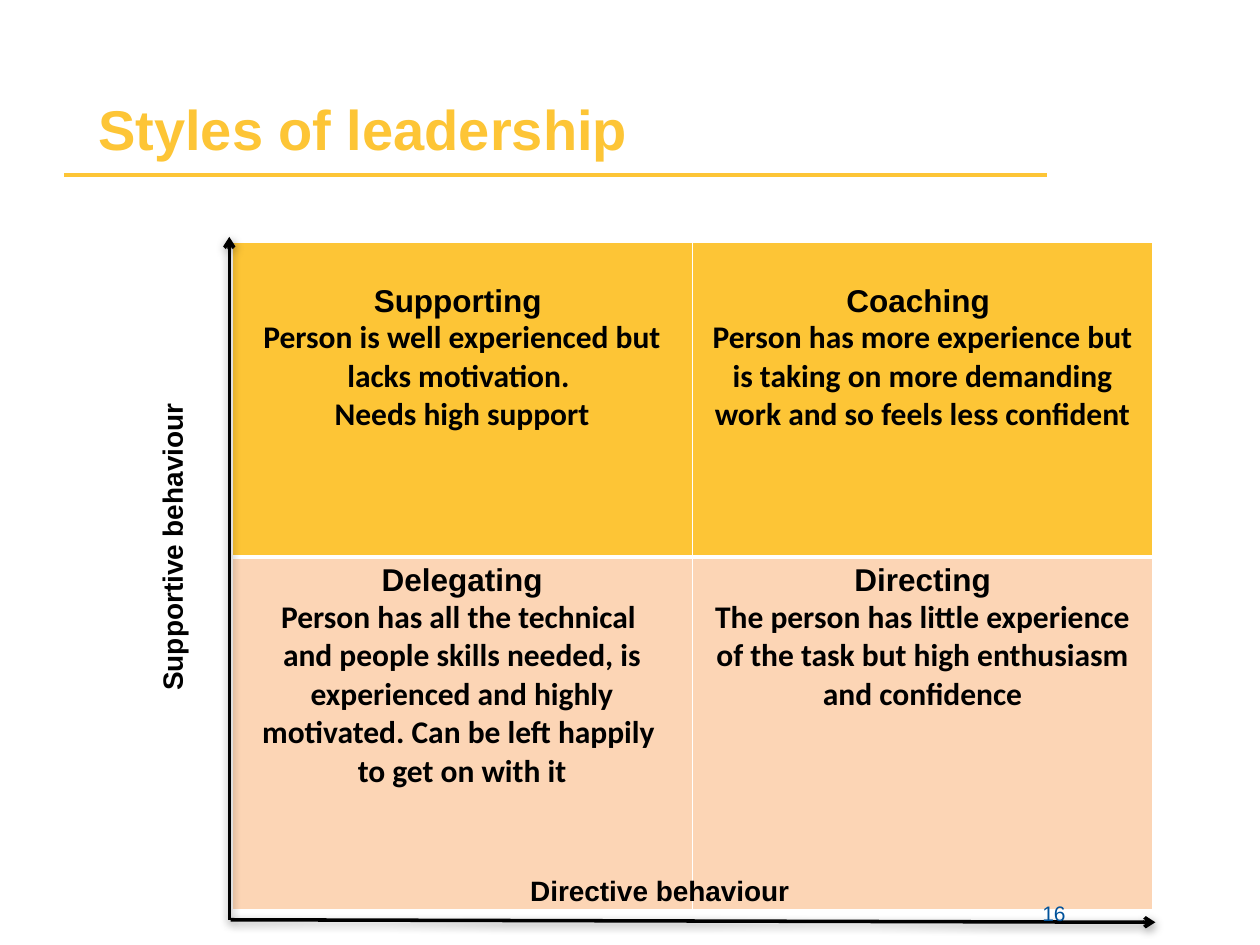
"""Build a slide with the four styles of leadership on two axes."""
import dataclasses
import typing

import lxml.etree
import pptx
import pptx.dml.color
import pptx.enum.shapes
import pptx.enum.text
import pptx.oxml
import pptx.oxml.ns
import pptx.util

ALIGN = pptx.enum.text.PP_ALIGN
SPACE = 'xmlns:a="http://schemas.openxmlformats.org/drawingml/2006/main"'


@dataclasses.dataclass(frozen=True)
class Theme:
    gold: str = "FDC536"
    peach: str = "FCD5B5"
    black: str = "000000"
    white: str = "FFFFFF"
    blue: str = "00529B"
    head: str = "Arial"
    body: str = "Calibri"
    title: int = 32
    cell: int = 18
    axis: int = 16
    page: int = 12
    thin: int = 1
    line: int = 2
    thick: int = 3


@dataclasses.dataclass(frozen=True)
class Box:
    """Left, top, width and height as percent of the slide."""
    left: float
    top: float
    width: float
    height: float


@dataclasses.dataclass(frozen=True)
class Style:
    name: str
    lines: tuple[str, ...]


@dataclasses.dataclass(frozen=True)
class Label:
    text: str
    box: Box
    size: int
    color: str
    bold: bool = True
    align: typing.Any = ALIGN.LEFT
    turn: bool = False


@dataclasses.dataclass(frozen=True)
class Stroke:
    """Start and end as percent of the slide."""
    start: tuple[float, float]
    end: tuple[float, float]
    color: str
    arrow: bool = False


THEME = Theme()
WIDE = pptx.util.Inches(10)
HIGH = pptx.util.Inches(7.5)
TITLE = Box(6.8, 0, 75.3, 17.73)
GRID = Box(18.4, 25.6, 73.1, 70.67)
ROWS = (33.33, 37.34)
TOPS = (0.33, 0.05)
FILLS = (THEME.gold, THEME.peach)
STYLES = (
    (Style("Supporting ", ("Person is well experienced but lacks motivation. ",
                           "Needs high support")),
     Style("Coaching ", ("Person has more experience but is taking on more "
                         "demanding work and so feels less confident",))),
    (Style("Delegating", ("Person has all the technical \vand people skills "
                          "needed, is experienced and highly motivated. "
                          "Can be left happily \vto get on with it",)),
     Style("Directing", ("The person has little experience of the task but "
                         "high enthusiasm and confidence",))),
)
STROKES = (
    Stroke((5.1, 18.53), (83.1, 18.53), THEME.gold),
    Stroke((18.3, 97.33), (91.7, 97.6), THEME.black, True),
    Stroke((18.2, 97.33), (18.2, 25.07), THEME.black, True),
)
LABELS = (
    Label("Directive behaviour", Box(41.1, 91.73, 27.4, 4.93),
          THEME.axis, THEME.black),
    Label("Supportive behaviour", Box(11.8, 20.4, 4.7, 54),
          THEME.axis, THEME.black, turn=True),
    Label("16", Box(72, 94.67, 23.3, 5.33), THEME.page, THEME.blue,
          bold=False, align=ALIGN.CENTER),
)


def across(part: float) -> int:
    """Turn a percent of the width into a length."""
    return round(WIDE * part / 100)


def down(part: float) -> int:
    """Turn a percent of the height into a length."""
    return round(HIGH * part / 100)


def place(box: Box) -> tuple[int, int, int, int]:
    """Turn a box into four lengths."""
    return (across(box.left), down(box.top),
            across(box.width), down(box.height))


def apply(item: typing.Any, form: dict[str, typing.Any]) -> None:
    """Set each value of a format on an item."""
    for key, value in form.items():
        setattr(item, key, value)


def tint(color: str) -> pptx.dml.color.RGBColor:
    """Turn a hex code into a colour."""
    return pptx.dml.color.RGBColor.from_string(color)


def write(para: typing.Any, text: str, face: str, size: int, color: str,
          bold: bool = True, align: typing.Any = ALIGN.LEFT) -> None:
    """Fill one paragraph with formatted text."""
    apply(para, {"text": text, "alignment": align})
    for run in para.runs:
        apply(run.font, {"name": face, "size": pptx.util.Pt(size),
                         "bold": bold})
        run.font.color.rgb = tint(color)


def edge(cell: typing.Any, row: int) -> None:
    """Draw the white borders of a cell."""
    props = cell._tc.get_or_add_tcPr()
    heavy = "lnT" if row else "lnB"
    for side in ("lnL", "lnR", "lnT", "lnB"):
        width = pptx.util.Pt(THEME.thick if side == heavy else THEME.thin)
        props.append(pptx.oxml.parse_xml(
            f'<a:{side} {SPACE} w="{int(width)}"><a:solidFill>'
            f'<a:srgbClr val="{THEME.white}"/></a:solidFill></a:{side}>'))


def fill(cell: typing.Any, style: Style, row: int) -> None:
    """Colour a cell and write its style of leadership."""
    edge(cell, row)
    cell.fill.solid()
    cell.fill.fore_color.rgb = tint(FILLS[row])
    cell.margin_top = pptx.util.Inches(TOPS[row])
    frame = cell.text_frame
    write(frame.paragraphs[0], style.name, THEME.head, THEME.cell,
          THEME.black, align=ALIGN.CENTER)
    for line in style.lines:
        write(frame.add_paragraph(), line, THEME.body, THEME.cell,
              THEME.black, align=ALIGN.CENTER)


def chart(slide: typing.Any) -> None:
    """Add the table of styles."""
    table = slide.shapes.add_table(len(STYLES), len(STYLES[0]),
                                   *place(GRID)).table
    apply(table, {"first_row": False, "horz_banding": False})
    for row, styles in enumerate(STYLES):
        table.rows[row].height = down(ROWS[row])
        for col, style in enumerate(styles):
            fill(table.cell(row, col), style, row)


def draw(slide: typing.Any, stroke: Stroke) -> None:
    """Add a line, with a head and a shadow if it is an arrow."""
    (left, top), (right, base) = stroke.start, stroke.end
    link = slide.shapes.add_connector(
        pptx.enum.shapes.MSO_CONNECTOR.STRAIGHT,
        across(left), down(top), across(right), down(base))
    link.line.width = pptx.util.Pt(THEME.line)
    link.line.color.rgb = tint(stroke.color)
    props = link._element.spPr
    shade = ""
    if stroke.arrow:
        tail = lxml.etree.SubElement(link.line._get_or_add_ln(),
                                     pptx.oxml.ns.qn("a:tailEnd"))
        tail.set("type", "arrow")
        shade = ('<a:outerShdw blurRad="63500" dist="20320" dir="5400000" '
                 f'rotWithShape="0"><a:srgbClr val="{THEME.black}">'
                 '<a:alpha val="38000"/></a:srgbClr></a:outerShdw>')
    props.append(pptx.oxml.parse_xml(
        f"<a:effectLst {SPACE}>{shade}</a:effectLst>"))


def note(slide: typing.Any, label: Label) -> None:
    """Add a text box."""
    frame = slide.shapes.add_textbox(*place(label.box)).text_frame
    frame.word_wrap = True
    if label.turn:
        frame._txBody.bodyPr.set("vert", "vert270")
    write(frame.paragraphs[0], label.text, THEME.head, label.size,
          label.color, label.bold, label.align)


def main() -> None:
    """Build and save the slide."""
    deck = pptx.Presentation()
    apply(deck, {"slide_width": WIDE, "slide_height": HIGH})
    slide = deck.slides.add_slide(deck.slide_layouts[5])
    title = slide.shapes.title
    apply(title, dict(zip(("left", "top", "width", "height"), place(TITLE))))
    apply(title.text_frame, {
        "vertical_anchor": pptx.enum.text.MSO_ANCHOR.BOTTOM,
        "auto_size": pptx.enum.text.MSO_AUTO_SIZE.NONE})
    write(title.text_frame.paragraphs[0], "Styles of leadership",
          THEME.head, THEME.title, THEME.gold)
    chart(slide)
    for stroke in STROKES:
        draw(slide, stroke)
    for label in LABELS:
        note(slide, label)
    deck.save("out.pptx")


if __name__ == "__main__":
    main()
